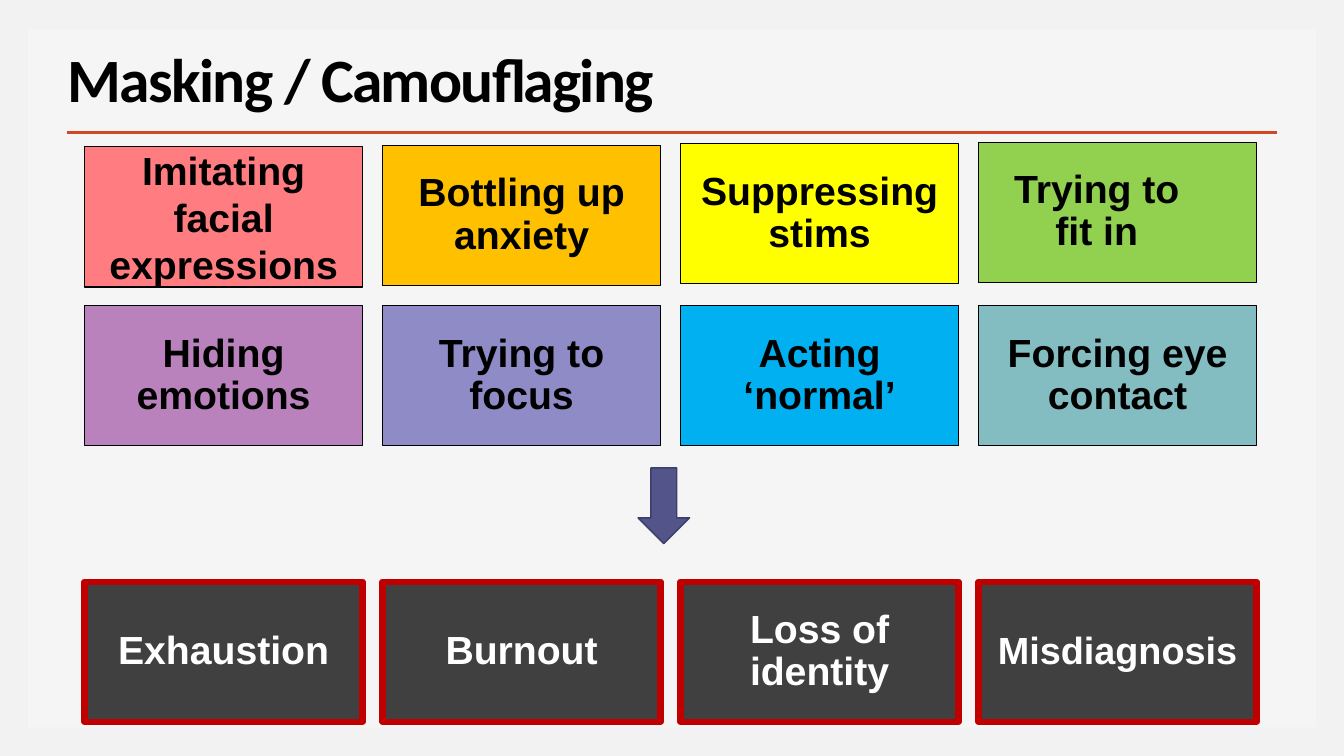
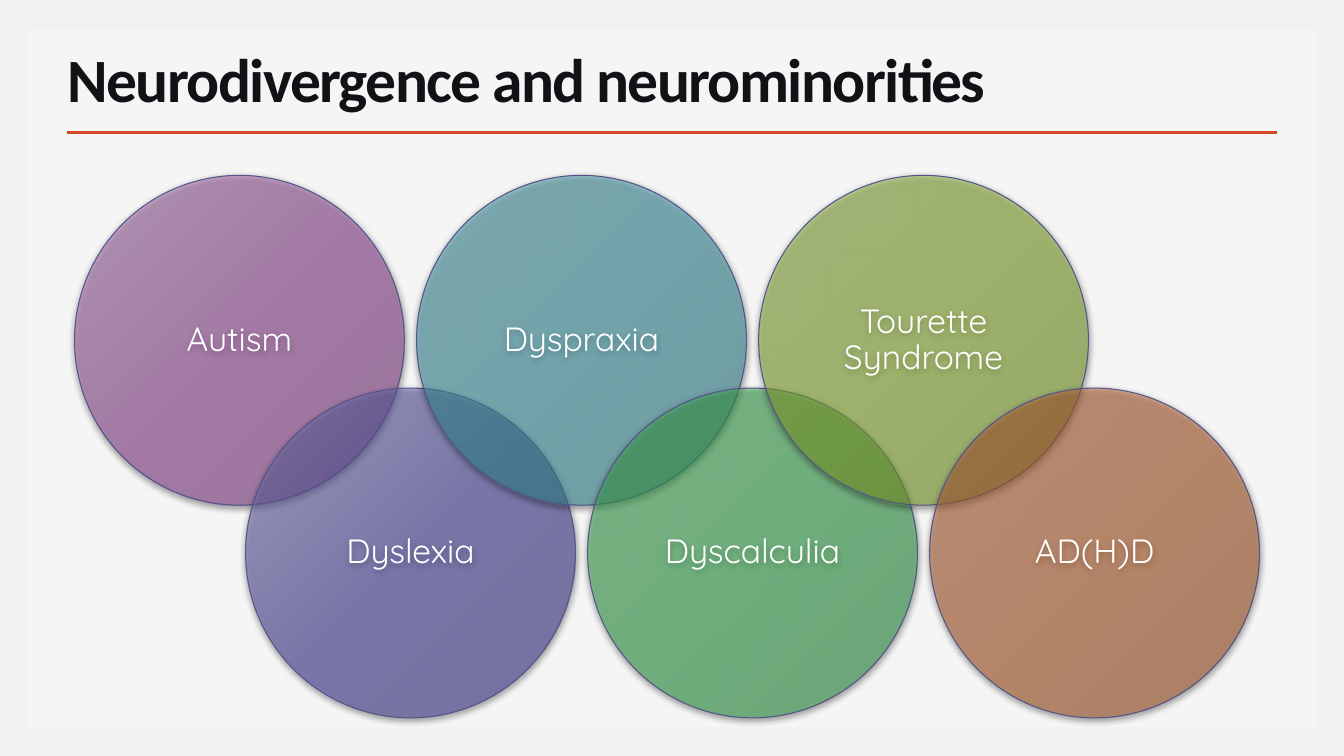
from lxml import etree
from pptx import Presentation
from pptx.dml.color import RGBColor
from pptx.enum.shapes import MSO_CONNECTOR, MSO_SHAPE
from pptx.enum.text import MSO_ANCHOR, MSO_AUTO_SIZE, PP_ALIGN
from pptx.oxml import parse_xml
from pptx.oxml.ns import nsdecls, qn
from pptx.util import Cm, Pt

RECTANGLE, OVAL, DOWN_ARROW = MSO_SHAPE.RECTANGLE, MSO_SHAPE.OVAL, MSO_SHAPE.DOWN_ARROW
STRAIGHT = MSO_CONNECTOR.STRAIGHT
LEFT, CENTER = PP_ALIGN.LEFT, PP_ALIGN.CENTER
MIDDLE, BOTTOM = MSO_ANCHOR.MIDDLE, MSO_ANCHOR.BOTTOM
NO_AUTOFIT = MSO_AUTO_SIZE.NONE
TITLE_ONLY = 5

COLORS = {
    "background": "F2F2F2", "panel": "F5F5F5", "rule": "D24726",
    "black": "000000", "ink": "111116", "white": "FFFFFF",
    "coral": "FF7C80", "amber": "FFC000", "yellow": "FFFF00", "lime": "92D050",
    "mauve": "B982BC", "lavender": "8E8BC7", "sky": "00B0F0", "teal": "83BCC1",
    "charcoal": "404040", "red": "C00000", "indigo": "53548A", "indigo_dark": "3D3E66",
}

TILE_LEFT, TILE_PITCH, TILE_WIDTH, TILE_HEIGHT = 2.13, 7.51, 7.01, 3.53
CIRCLE_LEFT, CIRCLE_PITCH, CIRCLE_SIZE = 1.88, 4.31, 8.31
CIRCLE_TOPS = (4.42, 9.78)

STRATEGIES = [
    ("Bottling up anxiety", "amber"),
    ("Suppressing stims", "yellow"),
    ("Trying to\nfit in", "lime"),
]
HABITS = [
    ("Hiding emotions", "mauve"),
    ("Trying to focus", "lavender"),
    ("Acting ‘normal’", "sky"),
    ("Forcing eye contact", "teal"),
]
OUTCOMES = [("Exhaustion", 28), ("Burnout", 28), ("Loss of identity", 28), ("Misdiagnosis", 27)]
CONDITIONS = [
    ("Autism", ("B982BC", "A04DA3", "904592")),
    ("Dyslexia", ("8E8BC7", "4B47AA", "443F98")),
    ("Dyspraxia", ("54A8B5", "40A2B0", "3A919E")),
    ("Dyscalculia", ("50BB63", "3AB754", "34A44B")),
    ("Tourette Syndrome", ("9CC14C", "95BD33", "86AA2E")),
    ("AD(H)D", ("C77148", "C4652D", "B05B28")),
]


def rgb(name):
    return RGBColor.from_string(COLORS[name])


class Deck:
    def __init__(self):
        self.prs = Presentation()
        self.prs.slide_width, self.prs.slide_height = Cm(33.87), Cm(19.05)
        self.layout = self.prs.slide_layouts[TITLE_ONLY]
        self.slide = None

    def add_slide(self, title, color):
        first = self.slide is None
        self.slide = self.prs.slides.add_slide(self.layout)
        if first:
            self.build_layout()
        heading = self.slide.shapes.title
        heading.left, heading.top, heading.width, heading.height = Cm(1.45), Cm(1.14), Cm(30.63), Cm(1.88)
        self.set_text(heading, title, "Calibri", 44, color, bold=True, align=LEFT, anchor=BOTTOM, spacing=0.85)
        heading.text_frame.paragraphs[0].runs[0].font._element.set("spc", "-120")

    def build_layout(self):
        background = self.layout.background.fill
        background.solid()
        background.fore_color.rgb = rgb("background")
        panel = self.box(RECTANGLE, 0.71, 0.74, 32.46, 17.6, "panel")
        rule = self.slide.shapes.add_connector(STRAIGHT, Cm(1.68), Cm(3.33), Cm(32.18), Cm(3.33))
        rule.line.color.rgb, rule.line.width = rgb("rule"), Pt(2)
        etree.SubElement(rule._element.spPr, qn("a:effectLst"))
        for part in (panel, rule):
            self.layout.shapes.element.append(part._element)

    def set_text(self, shape, text, font, size, color, bold=False, align=CENTER,
                 anchor=MIDDLE, spacing=0.9, inset=None):
        frame = shape.text_frame
        frame.text = text
        frame.word_wrap, frame.auto_size, frame.vertical_anchor = True, NO_AUTOFIT, anchor
        if inset is not None:
            frame.margin_left = frame.margin_right = frame.margin_top = frame.margin_bottom = Cm(inset)
        for paragraph in frame.paragraphs:
            paragraph.alignment, paragraph.line_spacing = align, spacing
            for run in paragraph.runs:
                run.font.name, run.font.size, run.font.bold = font, Pt(size), bold
                run.font.color.rgb = rgb(color)

    def box(self, kind, left, top, width, height, fill=None, line=None, weight=0.75):
        shape = self.slide.shapes.add_shape(kind, Cm(left), Cm(top), Cm(width), Cm(height))
        shape.shadow.inherit = False
        if fill:
            shape.fill.solid()
            shape.fill.fore_color.rgb = rgb(fill)
        if line:
            shape.line.color.rgb, shape.line.width = rgb(line), Pt(weight)
        else:
            shape.line.fill.background()
        return shape

    def tile(self, column, top, text, fill, line="black", weight=0.75, color="black",
             size=28, spacing=0.9, inset=0.41):
        left = TILE_LEFT + column * TILE_PITCH
        tile = self.box(RECTANGLE, left, top, TILE_WIDTH, TILE_HEIGHT, fill, line, weight)
        self.set_text(tile, text, "Arial", size, color, bold=True, spacing=spacing, inset=inset)
        return tile

    def circle(self, left, top, text, tints):
        circle = self.box(OVAL, left, top, CIRCLE_SIZE, CIRCLE_SIZE, line="indigo")
        stops = "".join(
            f'<a:gs pos="{position}"><a:srgbClr val="{tint}"><a:alpha val="50000"/></a:srgbClr></a:gs>'
            for position, tint in zip((0, 50000, 100000), tints))
        properties = circle._element.spPr
        properties.find(qn("a:prstGeom")).addnext(parse_xml(
            f'<a:gradFill {nsdecls("a")} rotWithShape="1"><a:gsLst>{stops}</a:gsLst>'
            '<a:lin ang="2700000" scaled="0"/></a:gradFill>'))
        properties.find(qn("a:effectLst")).append(parse_xml(
            f'<a:outerShdw {nsdecls("a")} blurRad="{Pt(4.5)}" dist="{Pt(1.5)}" dir="5400000" rotWithShape="0">'
            '<a:srgbClr val="000000"><a:alpha val="63000"/></a:srgbClr></a:outerShdw>'))
        self.set_text(circle, text, "Quicksand", 24, "white", inset=0.25)


def masking(deck):
    deck.add_slide("Masking / Camouflaging", "black")
    deck.tile(0, 3.7, "Imitating facial expressions", "coral", weight=1, spacing=1.0, inset=0.25)
    for column, (text, fill) in enumerate(STRATEGIES, start=1):
        fitting_in = deck.tile(column, 3.7 - 0.04 * column, text, fill)
    first_line = fitting_in.text_frame.paragraphs[0]
    first_line._p.get_or_add_pPr().set("marR", str(Cm(1.05)))
    for column, (text, fill) in enumerate(HABITS):
        deck.tile(column, 7.7, text, fill)
    deck.box(DOWN_ARROW, 16.08, 11.79, 1.3, 1.91, "indigo", "indigo_dark", 1)
    for column, (text, size) in enumerate(OUTCOMES):
        deck.tile(column, 14.66, text, "charcoal", "red", 4.5, "white", size)


def neurominorities(deck):
    deck.add_slide("Neurodivergence and neurominorities", "ink")
    for index, (text, tints) in enumerate(CONDITIONS):
        deck.circle(CIRCLE_LEFT + index * CIRCLE_PITCH, CIRCLE_TOPS[index % 2], text, tints)


def main():
    deck = Deck()
    masking(deck)
    neurominorities(deck)
    deck.prs.save("out.pptx")


if __name__ == "__main__":
    main()
